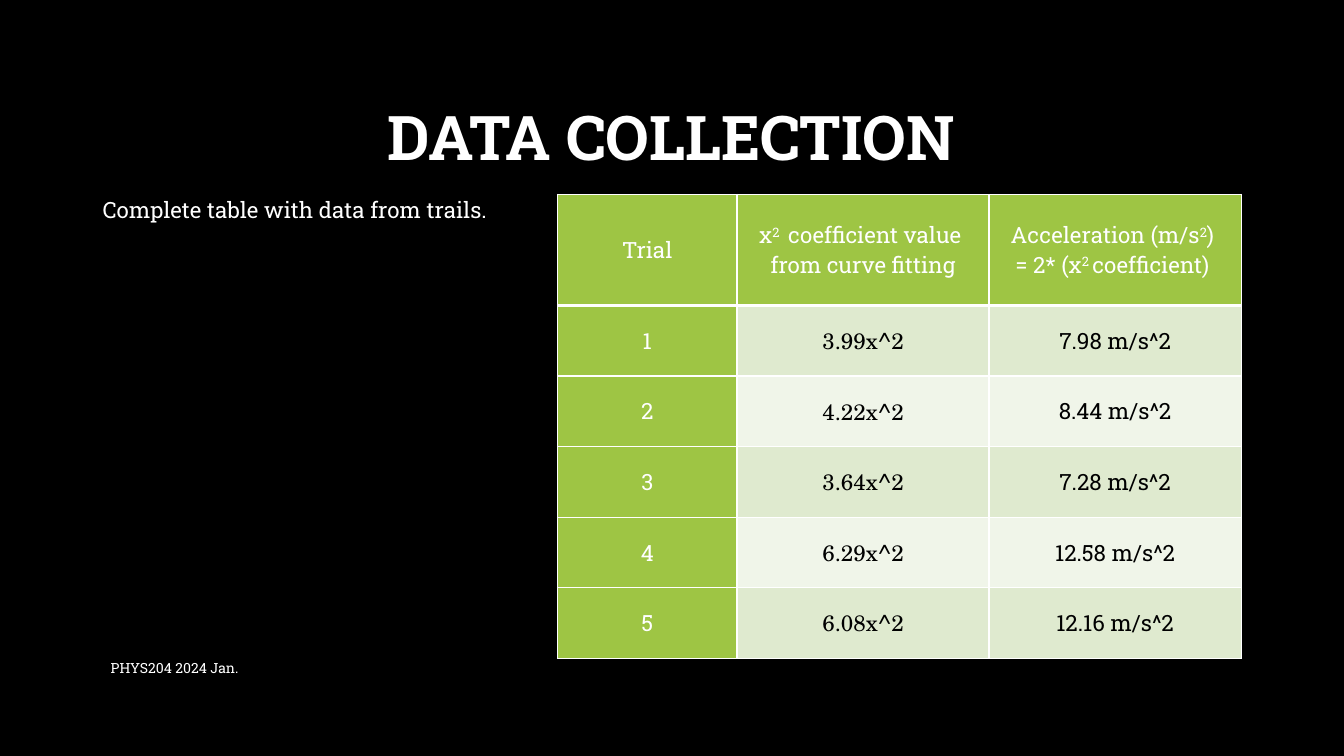
import pptx
import pptx.dml.color
import pptx.enum.text
import pptx.oxml
import pptx.oxml.ns
import pptx.util
from dataclasses import dataclass

Inches = pptx.util.Inches
Pt = pptx.util.Pt
Align = pptx.enum.text.PP_ALIGN
Anchor = pptx.enum.text.MSO_ANCHOR


@dataclass(frozen=True)
class Theme:
    background: str = "000000"
    light: str = "FFFFFF"
    dark: str = "000000"
    accent: str = "9EC544"
    bands: tuple = ("DFEACF", "F0F5E9")
    font: str = "Roboto Slab"
    formula_font: str = "TeX Gyre Schola"
    title_size: int = 44
    body_size: int = 16
    footer_size: int = 10
    border: int = 1
    header_border: int = 3


def apply_format(target, values):
    for name, value in values.items():
        setattr(target, name, value)


def rgb(color):
    return pptx.dml.color.RGBColor.from_string(color)


class SlideBuilder:
    def __init__(self, slide, theme):
        self.slide = slide
        self.theme = theme
        fill = slide.background.fill
        fill.solid()
        fill.fore_color.rgb = rgb(theme.background)

    def add_runs(self, paragraph, pieces, color, size, font=None, bold=False):
        """Add runs; a piece starting with ^ is superscript and "\\n" breaks the line."""
        for piece in pieces:
            if piece == "\n":
                paragraph.add_line_break()
                continue
            run = paragraph.add_run()
            run.text = piece.removeprefix("^")
            apply_format(run.font, {
                "name": font or self.theme.font, "size": Pt(size), "bold": bold})
            run.font.color.rgb = rgb(color)
            if piece.startswith("^"):
                run.font._element.set("baseline", "30000")

    def text(self, box, words, size, anchor=Anchor.MIDDLE, bold=False, **paragraph_format):
        shape = self.slide.shapes.add_textbox(*map(Inches, box))
        apply_format(shape.text_frame, {"word_wrap": True, "vertical_anchor": anchor})
        paragraph = shape.text_frame.paragraphs[0]
        apply_format(paragraph, paragraph_format)
        self.add_runs(paragraph, [words], self.theme.light, size, bold=bold)

    def borders(self, cell, bottom_width):
        properties = cell._tc.get_or_add_tcPr()
        for side in "LRTB":
            width = Pt(bottom_width if side == "B" else self.theme.border)
            properties.append(pptx.oxml.parse_xml(
                f'<a:ln{side} {pptx.oxml.ns.nsdecls("a")} w="{width}"><a:solidFill>'
                f'<a:srgbClr val="{self.theme.light}"/></a:solidFill></a:ln{side}>'))

    def cell(self, cell, pieces, fill, color, font, bottom_width):
        apply_format(cell, {
            "vertical_anchor": Anchor.MIDDLE,
            "margin_left": Inches(0.07), "margin_right": Inches(0.07),
            "margin_top": 0, "margin_bottom": 0})
        self.borders(cell, bottom_width)
        cell.fill.solid()
        cell.fill.fore_color.rgb = rgb(fill)
        paragraph = cell.text_frame.paragraphs[0]
        paragraph.alignment = Align.CENTER
        self.add_runs(paragraph, pieces, color, self.theme.body_size, font)

    def table(self, left, top, widths, heights, rows):
        theme = self.theme
        table = self.slide.shapes.add_table(
            len(rows), len(widths), Inches(left), Inches(top),
            Inches(sum(widths)), Inches(sum(heights))).table
        apply_format(table, {"first_row": False, "horz_banding": False})
        for column, width in zip(table.columns, widths):
            column.width = Inches(width)
        for row, height in zip(table.rows, heights):
            row.height = Inches(height)
        for row_index, row in enumerate(rows):
            for column_index, pieces in enumerate(row):
                heading = row_index == 0 or column_index == 0
                formula = column_index == 1 and not heading
                self.cell(
                    table.cell(row_index, column_index), pieces,
                    theme.accent if heading else theme.bands[(row_index - 1) % 2],
                    theme.light if heading else theme.dark,
                    theme.formula_font if formula else theme.font,
                    theme.border if row_index else theme.header_border)


def main():
    presentation = pptx.Presentation()
    apply_format(presentation, {
        "slide_width": Inches(13.33), "slide_height": Inches(7.5)})
    slide = presentation.slides.add_slide(presentation.slide_layouts[6])
    theme = Theme()
    builder = SlideBuilder(slide, theme)

    builder.text((1, 0.67, 11.32, 1.45), "DATA COLLECTION", theme.title_size,
                 bold=True, alignment=Align.CENTER, line_spacing=0.9)
    builder.text((1, 6.43, 7.3, 0.4), "PHYS204 2024 Jan.", theme.footer_size)

    header = [
        ["Trial"],
        ["x", "^2 ", " coefficient value ", "\n", "from curve fitting"],
        ["Acceleration (m/s", "^2", ") ", "\n", "= 2* (x", "^2 ", "coefficient) "],
    ]
    trials = [("3.99", "7.98"), ("4.22", "8.44"), ("3.64", "7.28"),
              ("6.29", "12.58"), ("6.08", "12.16")]
    rows = [header] + [
        [[str(number)], [f"{coefficient}x^2"], [f"{acceleration} m/s^2"]]
        for number, (coefficient, acceleration) in enumerate(trials, 1)]
    builder.table(5.53, 1.93, [1.78, 2.5, 2.5], [1.1] + [0.7] * len(trials), rows)

    builder.text((0.92, 1.93, 4.2, 4.17), "Complete table with data from trails.",
                 theme.body_size, anchor=Anchor.TOP, line_spacing=0.9, space_before=Pt(10))
    presentation.save("out.pptx")


if __name__ == "__main__":
    main()
